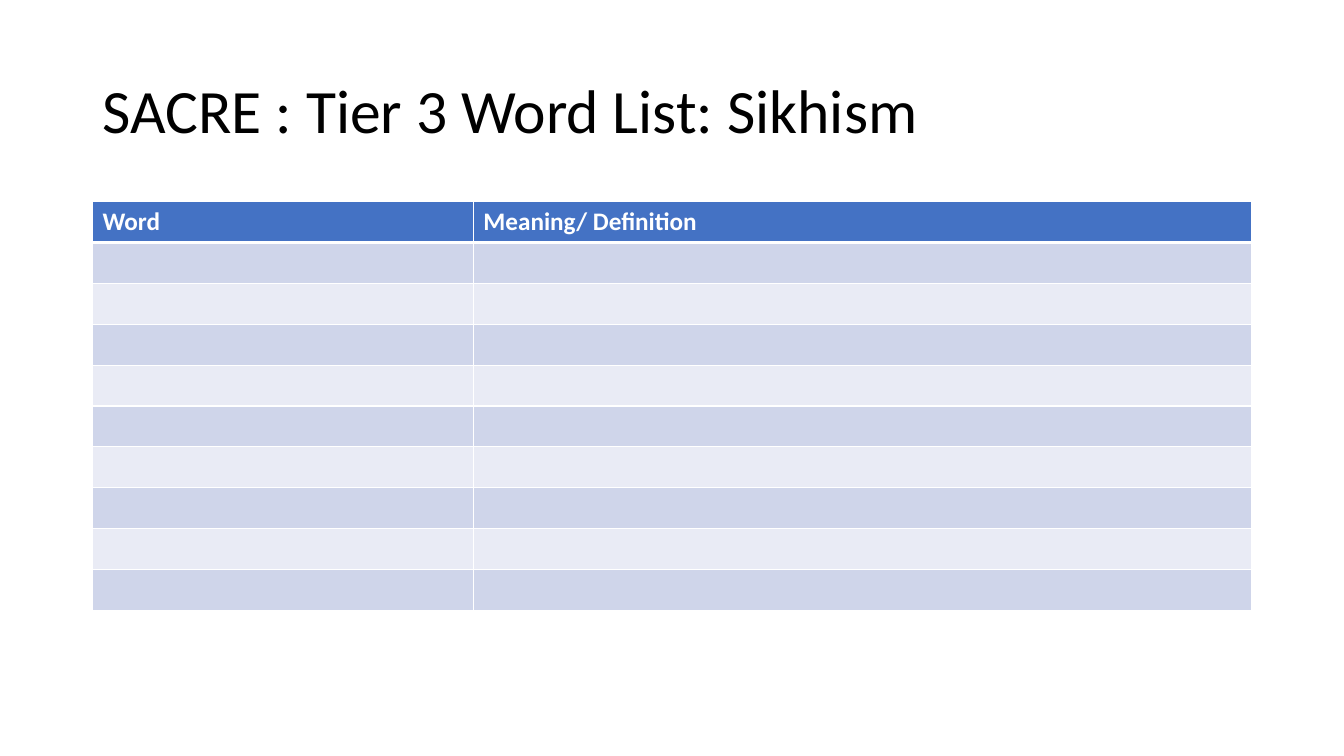
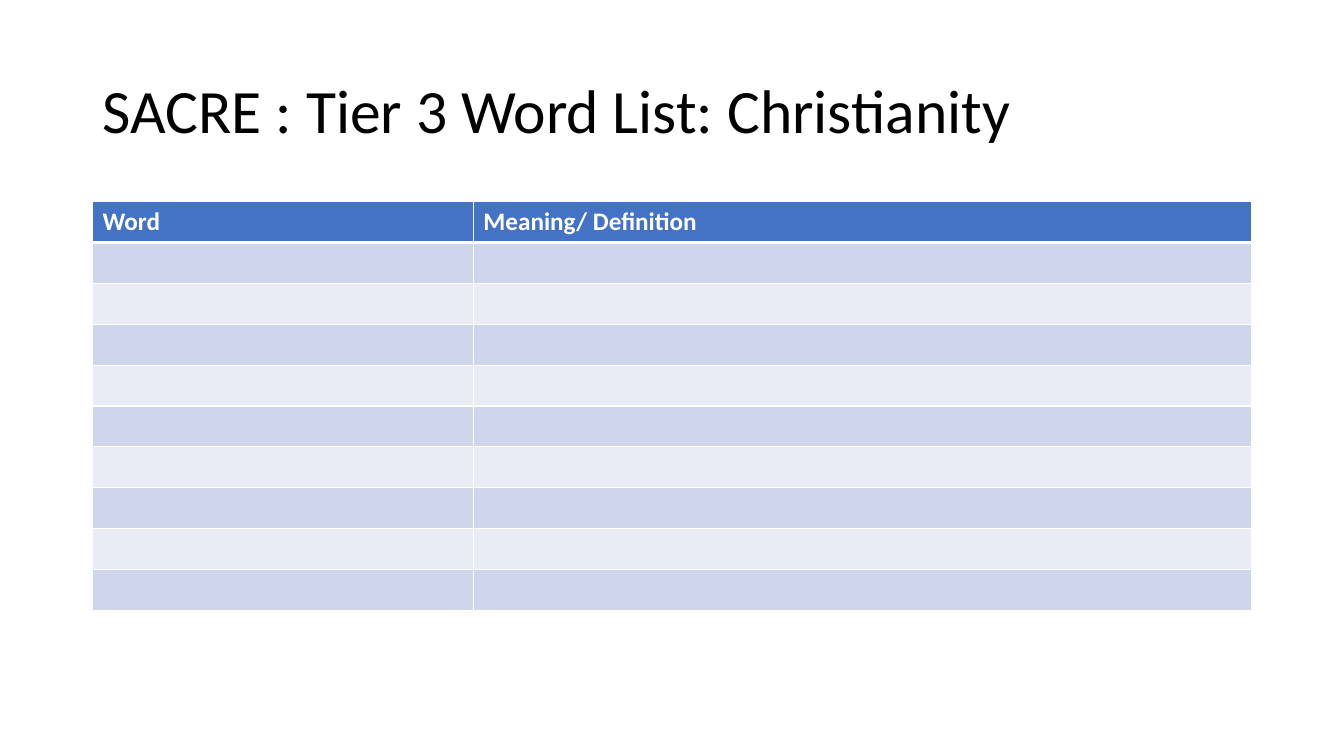
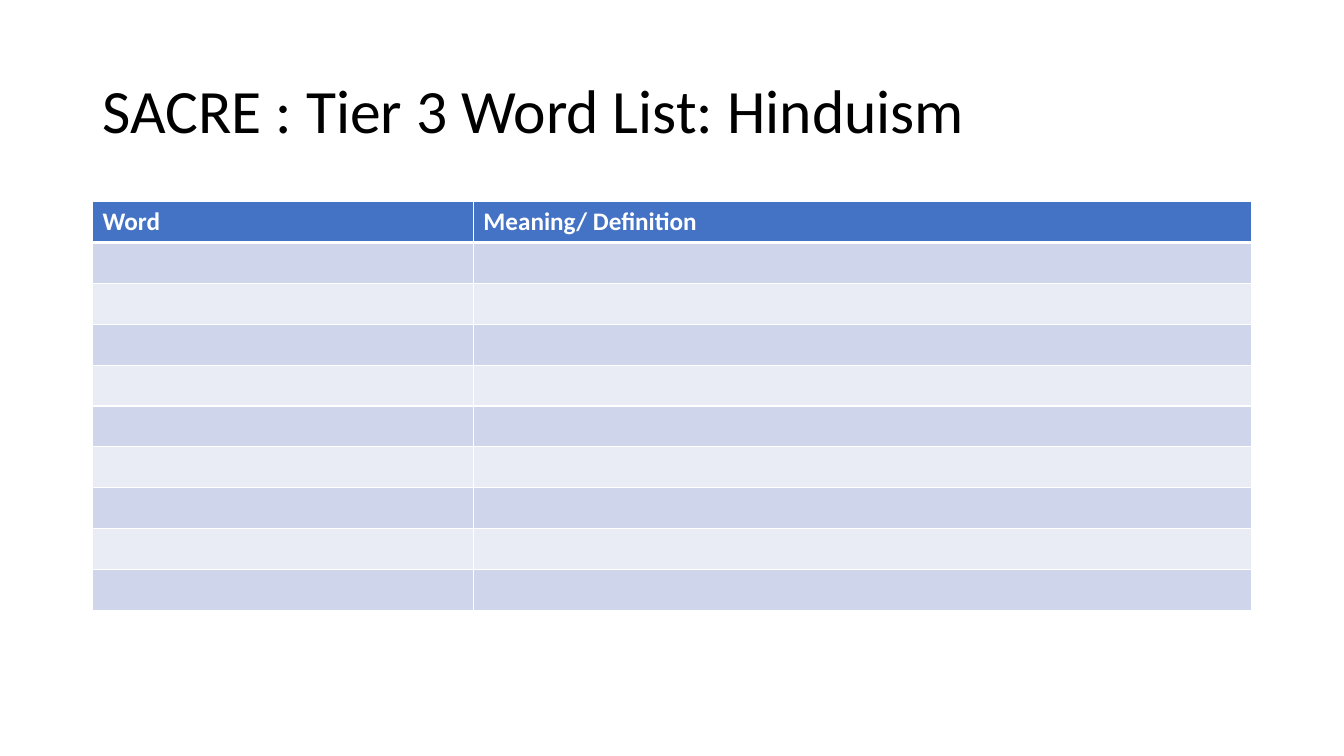
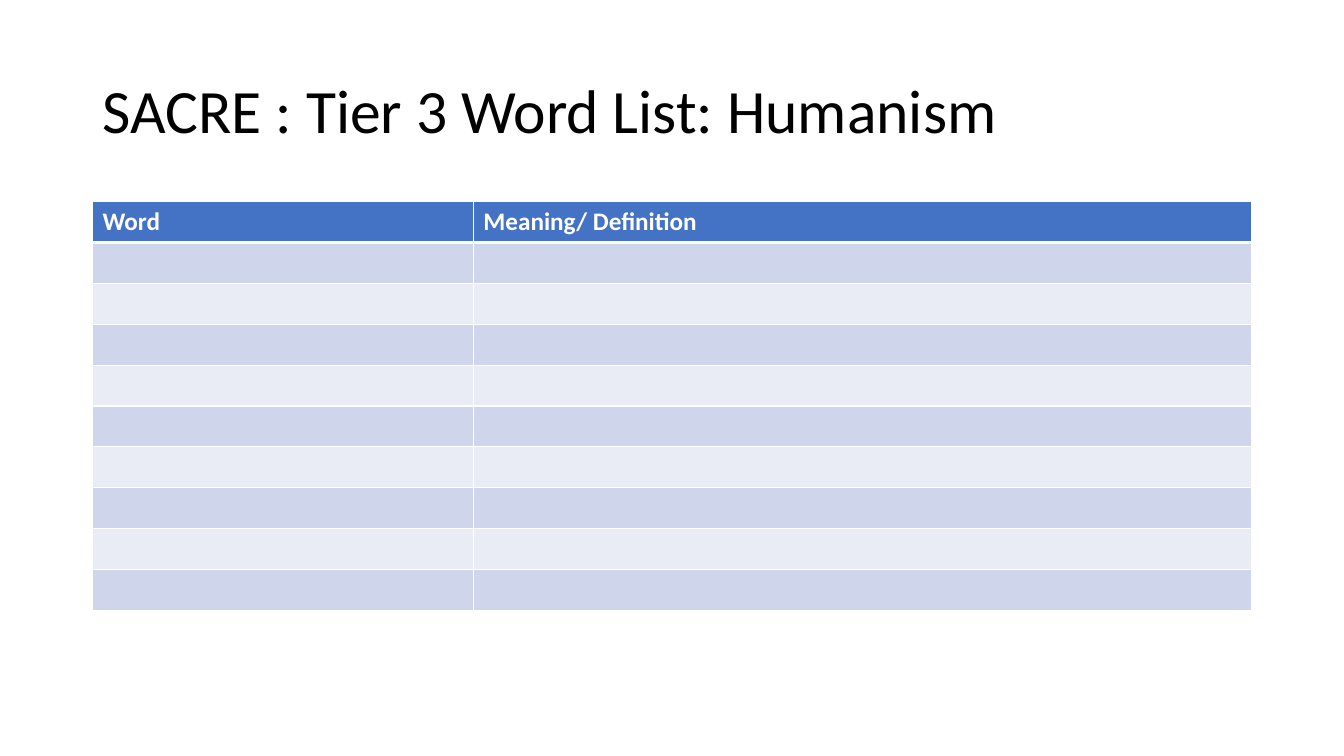
from lxml import etree
from pptx import Presentation
from pptx.dml.color import RGBColor
from pptx.enum.text import MSO_ANCHOR, PP_ALIGN
from pptx.oxml.ns import qn
from pptx.util import Cm, Pt

LEFT = PP_ALIGN.LEFT
MIDDLE = MSO_ANCHOR.MIDDLE
TITLE_ONLY = 5

COLORS = {
    "title": "000000",
    "header": "4472C4",
    "band_dark": "CFD5EA",
    "band_light": "E9EBF5",
    "white": "FFFFFF",
}
FONT = "Calibri"
TOPICS = ["Sikhism", "Christianity", "Hinduism", "Humanism"]
HEADINGS = ["Word", "Meaning/ Definition"]
COLUMN_WIDTHS = [Cm(9.6), Cm(19.61)]
ROW_COUNT = 10
ROW_HEIGHT = Cm(1.03)
MARGIN = Cm(2.33)
CONTENT_WIDTH = sum(COLUMN_WIDTHS)


def style_font(font, size, color, bold=False):
    font.name = FONT
    font.size = Pt(size)
    font.bold = bold
    font.color.rgb = RGBColor.from_string(COLORS[color])


def set_borders(cell, widths):
    """Draw white borders; widths are points for left, right, top, bottom."""
    properties = cell._tc.get_or_add_tcPr()
    for index, (side, width) in enumerate(zip("LRTB", widths)):
        line = etree.Element(qn(f"a:ln{side}"), w=str(Pt(width)))
        fill = etree.SubElement(line, qn("a:solidFill"))
        etree.SubElement(fill, qn("a:srgbClr"), val=COLORS["white"])
        properties.insert(index, line)


deck = Presentation()
deck.slide_width = Cm(33.87)
deck.slide_height = Cm(19.05)

# Shared title position
layout = deck.slide_layouts[TITLE_ONLY]
layout_title = layout.placeholders[0]
layout_title.left, layout_title.top = MARGIN, Cm(1.01)
layout_title.width, layout_title.height = CONTENT_WIDTH, Cm(3.68)
layout_title.text_frame.vertical_anchor = MIDDLE

for topic in TOPICS:
    page = deck.slides.add_slide(layout)

    # Title
    title = page.shapes.title
    title.text = f"SACRE : Tier 3 Word List: {topic}"
    para = title.text_frame.paragraphs[0]
    para.alignment = LEFT
    para.line_spacing = 0.9
    style_font(para.font, 44, "title")

    # Word table
    table = page.shapes.add_table(
        ROW_COUNT, len(HEADINGS), MARGIN, Cm(5.08),
        CONTENT_WIDTH, ROW_HEIGHT * ROW_COUNT).table
    for column, width in zip(table.columns, COLUMN_WIDTHS):
        column.width = width

    for row_index, row in enumerate(table.rows):
        row.height = ROW_HEIGHT
        if row_index == 0:
            color, widths = "header", (1, 1, 1, 3)
        else:
            color = "band_dark" if row_index % 2 else "band_light"
            widths = (1, 1, 3 if row_index == 1 else 1, 1)
        for cell in row.cells:
            cell.fill.solid()
            cell.fill.fore_color.rgb = RGBColor.from_string(COLORS[color])
            set_borders(cell, widths)

    for cell, heading in zip(table.rows[0].cells, HEADINGS):
        cell.text = heading
        style_font(cell.text_frame.paragraphs[0].font, 18, "white", bold=True)

deck.save("out.pptx")
